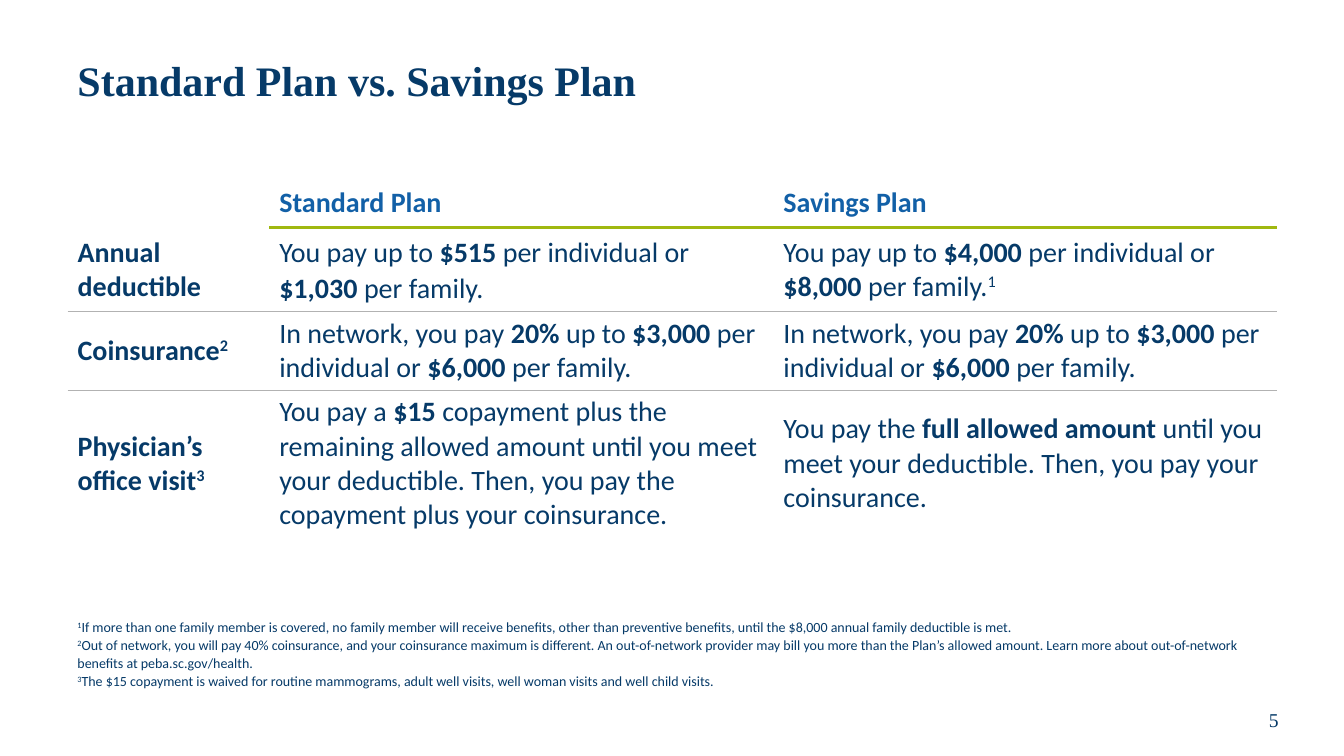
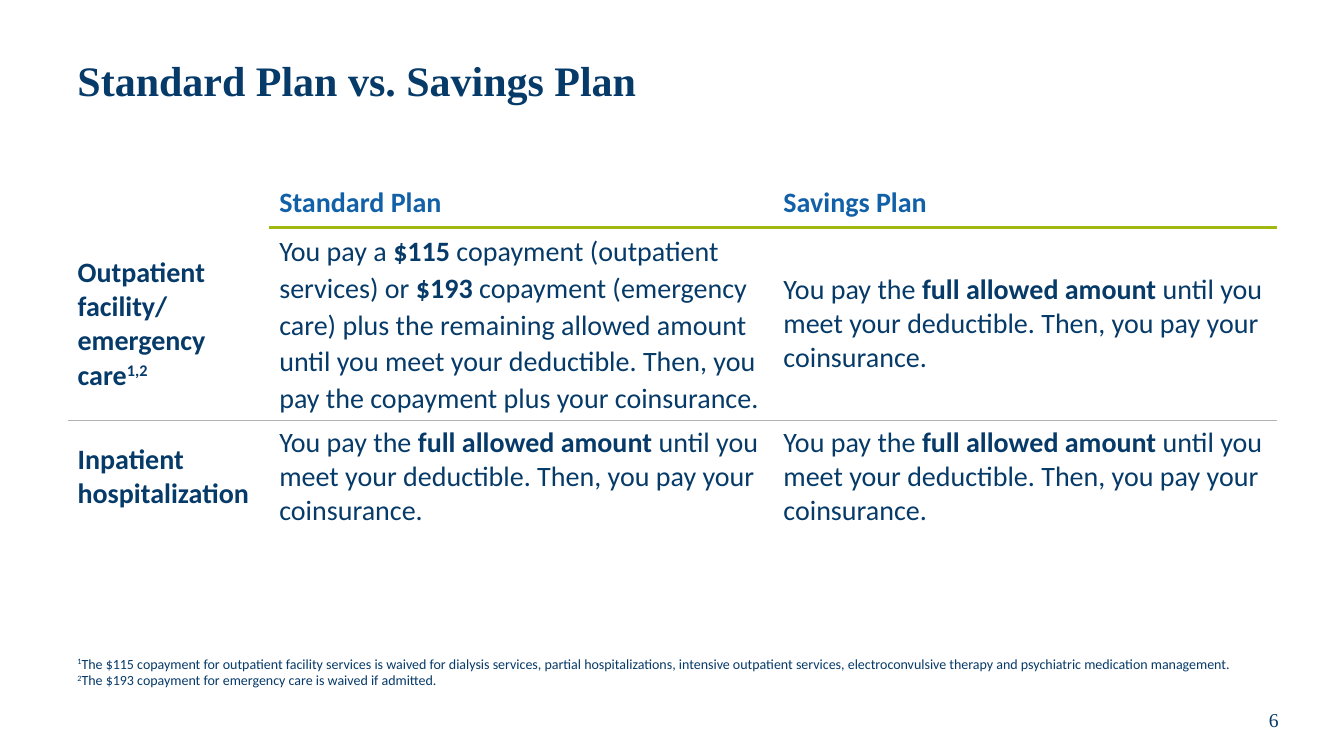
"""Build two slides comparing the Standard Plan with the Savings Plan."""
from lxml import etree
from pptx import Presentation
from pptx.dml.color import RGBColor
from pptx.enum.text import MSO_ANCHOR, PP_ALIGN
from pptx.oxml.ns import qn
from pptx.util import Inches, Pt

MIDDLE = MSO_ANCHOR.MIDDLE
TOP = MSO_ANCHOR.TOP
LEFT = PP_ALIGN.LEFT
CENTER = PP_ALIGN.CENTER

NAVY = "063A68"
BLUE = "1260A7"
HEADER_RULE = ("A0B810", 2.25)
ROW_RULE = ("B2B2B2", 0.5)
SERIF = "Times New Roman"
SANS = "Calibri"
MARGIN = 0.67
CONTENT_WIDTH = 12
COLUMN_WIDTHS = (2, 5, 5)
HEADER_HEIGHT = 0.5
TITLE = [("Standard Plan vs. Savings Plan", "bold")]
HEADER = [[], [("Standard Plan", "bold")], [("Savings Plan", "bold")]]

FULL_AMOUNT = [
    ("You pay the ", ""),
    ("full allowed amount ", "bold"),
    ("until you meet your deductible. Then, you pay your coinsurance.", ""),
]
COINSURANCE = [
    ("In network, you pay ", ""),
    ("20%", "bold"),
    (" up to ", ""),
    ("$3,000 ", "bold"),
    ("per individual or ", ""),
    ("$6,000 ", "bold"),
    ("per family.", ""),
]

SLIDES = [
    {
        "number": "5",
        "row_heights": (0.83, 0.78, 1.46),
        "rows": [
            [
                [("Annual deductible", "bold")],
                [
                    ("You pay up to ", ""),
                    ("$515", "bold"),
                    (" per individual or ", ""),
                    ("$1,030 ", "bold"),
                    ("per family.", ""),
                ],
                [
                    ("You pay up to ", ""),
                    ("$4,000 ", "bold"),
                    ("per individual or ", ""),
                    ("$8,000 ", "bold"),
                    ("per family.", ""),
                    ("1", "super"),
                ],
            ],
            [[("Coinsurance", "bold"), ("2", "bold super")], COINSURANCE, COINSURANCE],
            [
                [("Physician’s office visit", "bold"), ("3", "bold super")],
                [
                    ("You pay a ", ""),
                    ("$15 ", "bold"),
                    ("copayment plus the remaining allowed amount until you meet your "
                     "deductible. Then, you pay the copayment plus your coinsurance.", ""),
                ],
                FULL_AMOUNT,
            ],
        ],
        "notes_box": (6.08, 0.81),
        "notes_spacing": 1.07,
        "notes": [
            "If more than one family member is covered, no family member will receive "
            "benefits, other than preventive benefits, until the $8,000 annual family "
            "deductible is met.",
            "Out of network, you will pay 40% coinsurance, and your coinsurance maximum is "
            "different. An out-of-network provider may bill you more than the Plan’s allowed "
            "amount. Learn more about out-of-network benefits at peba.sc.gov/health.",
            "The $15 copayment is waived for routine mammograms, adult well visits, well "
            "woman visits and well child visits.",
        ],
    },
    {
        "number": "6",
        "row_heights": (1.91, 1.12),
        "rows": [
            [
                [
                    ("Outpatient facility/", "bold"),
                    ("\n", ""),
                    ("emergency care", "bold"),
                    ("1,2", "bold super"),
                ],
                [
                    ("You pay a ", ""),
                    ("$115", "bold"),
                    (" copayment (outpatient services) or ", ""),
                    ("$193", "bold"),
                    (" copayment (emergency care) plus the remaining allowed amount until you "
                     "meet your deductible. Then, you pay the copayment plus your "
                     "coinsurance.", ""),
                ],
                FULL_AMOUNT,
            ],
            [[("Inpatient hospitalization", "bold")], FULL_AMOUNT, FULL_AMOUNT],
        ],
        "notes_box": (6.45, 0.44),
        "notes_spacing": 1.0,
        "notes": [
            "The $115 copayment for outpatient facility services is waived for dialysis "
            "services, partial hospitalizations, intensive outpatient services, "
            "electroconvulsive therapy and psychiatric medication management.",
            "The $193 copayment for emergency care is waived if admitted.",
        ],
    },
]


def write_text(frame, paragraphs, font, size, color, align=LEFT, spacing=1.0):
    """Fill a text frame, one list of (text, style) runs per paragraph."""
    frame.word_wrap = True
    for index, runs in enumerate(paragraphs):
        paragraph = frame.add_paragraph() if index else frame.paragraphs[0]
        paragraph.alignment = align
        paragraph.line_spacing = spacing
        for text, style in runs:
            if text == "\n":
                paragraph.add_line_break()
                continue
            run = paragraph.add_run()
            run.text = text
            run.font.name = font
            run.font.size = Pt(size)
            run.font.bold = "bold" in style
            run.font.color.rgb = RGBColor.from_string(color)
            if "super" in style:
                run.font._element.set("baseline", "30000")


def set_borders(cell, top, bottom):
    """Draw the top and bottom rules of a cell and clear its sides."""
    properties = cell._tc.get_or_add_tcPr()
    edges = (("a:lnL", None), ("a:lnR", None), ("a:lnT", top), ("a:lnB", bottom))
    for position, (tag, rule) in enumerate(edges):
        line = etree.Element(qn(tag))
        if rule:
            color, width = rule
            line.set("w", str(Pt(width)))
            fill = etree.SubElement(line, qn("a:solidFill"))
            etree.SubElement(fill, qn("a:srgbClr"), val=color)
        else:
            etree.SubElement(line, qn("a:noFill"))
        properties.insert(position, line)


presentation = Presentation()
presentation.slide_width = Inches(13.33)
presentation.slide_height = Inches(7.5)

for content in SLIDES:
    slide = presentation.slides.add_slide(presentation.slide_layouts[6])
    notes = [[(str(mark), "super"), (note, "")] for mark, note in enumerate(content["notes"], 1)]
    notes_top, notes_height = content["notes_box"]
    text_boxes = [
        ((12.05, 6.89, 1.17, 0.5), MIDDLE,
         ([[(content["number"], "")]], SERIF, 14, NAVY, CENTER)),
        ((MARGIN, 0.25, CONTENT_WIDTH, 1.15), MIDDLE,
         ([TITLE], SERIF, 30, NAVY, LEFT, 0.9)),
        ((MARGIN, notes_top, CONTENT_WIDTH, notes_height), TOP,
         (notes, SANS, 10, NAVY, LEFT, content["notes_spacing"])),
    ]
    for bounds, anchor, text in text_boxes:
        frame = slide.shapes.add_textbox(*map(Inches, bounds)).text_frame
        frame.vertical_anchor = anchor
        write_text(frame, *text)

    rows = [HEADER] + content["rows"]
    heights = (HEADER_HEIGHT, *content["row_heights"])
    table = slide.shapes.add_table(
        len(rows), len(COLUMN_WIDTHS), Inches(MARGIN), Inches(1.76),
        Inches(CONTENT_WIDTH), Inches(sum(heights))).table
    table.first_row = False
    table.horz_banding = False
    for column, width in zip(table.columns, COLUMN_WIDTHS):
        column.width = Inches(width)
    for row_index, (row, height) in enumerate(zip(rows, heights)):
        table.rows[row_index].height = Inches(height)
        for column_index, runs in enumerate(row):
            cell = table.cell(row_index, column_index)
            cell.fill.background()
            cell.vertical_anchor = MIDDLE
            header_rule = HEADER_RULE if column_index else None
            top = (None, header_rule)[row_index] if row_index < 2 else ROW_RULE
            bottom = ROW_RULE if row_index else header_rule
            if row_index == len(rows) - 1:
                bottom = None
            set_borders(cell, top, bottom)
            color = NAVY if row_index else BLUE
            spacing = 1.07 if (row_index, column_index) == (1, 1) else 1.0
            write_text(cell.text_frame, [runs], SANS, 20, color, LEFT, spacing)

presentation.save("out.pptx")
